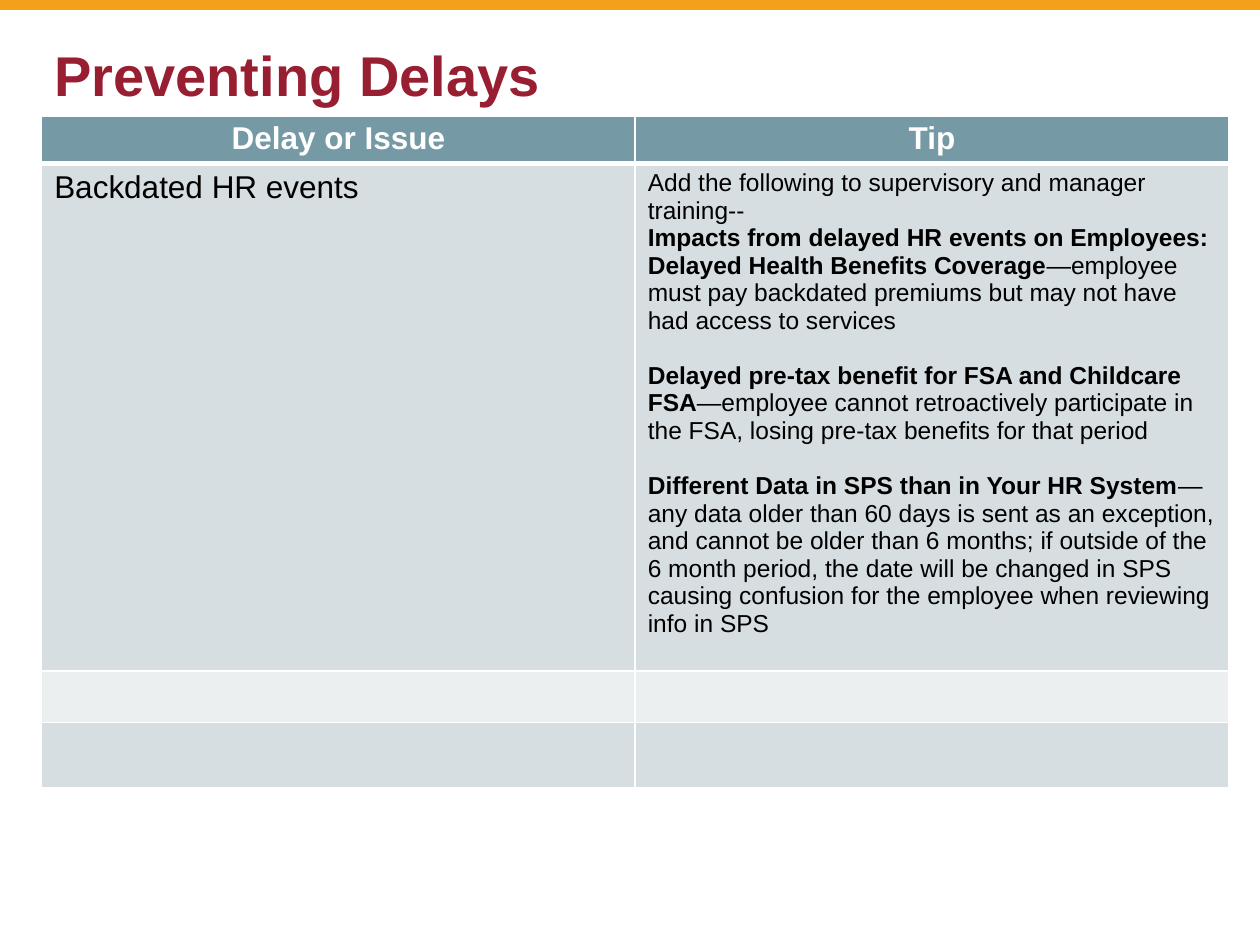
from lxml.etree import SubElement
from pptx import Presentation
from pptx.dml.color import RGBColor
from pptx.enum.shapes import MSO_SHAPE as Shape
from pptx.enum.text import MSO_ANCHOR as Anchor, PP_ALIGN as Align
from pptx.oxml.ns import qn
from pptx.util import Cm, Pt

ORANGE = RGBColor(0xF5, 0xA0, 0x1A)
CRIMSON = RGBColor(0x98, 0x1E, 0x32)
TEAL = RGBColor(0x75, 0x9A, 0xA5)
GREY = RGBColor(0xD6, 0xDE, 0xE1)
PALE = RGBColor(0xEC, 0xEF, 0xF0)
WHITE = RGBColor(0xFF, 0xFF, 0xFF)
BLACK = RGBColor(0, 0, 0)

LEFT, WIDTH = 0.84, 23.93
ROW_HEIGHTS = [0.95, 10.24, 1.02, 1.32]
ROW_FILLS = [TEAL, GREY, PALE, GREY]
THIN, THICK = 1, 3

# Each tip: bold lead, plain remainder, space before in points
TIPS = [
    ("", "Add the following to supervisory and manager training--", 0),
    ("Impacts from delayed HR events on Employees:", "", 0),
    ("Delayed Health Benefits Coverage",
     "—employee must pay backdated premiums but may not have had access "
     "to services", 0),
    ("Delayed pre-tax benefit for FSA and Childcare FSA",
     "—employee cannot retroactively participate in the FSA, losing pre-tax "
     "benefits for that period", 15.7),
    ("Different Data in SPS than in Your HR System",
     "—any data older than 60 days is sent as an exception, and cannot be "
     "older than 6 months; if outside of the 6 month period, the date will be "
     "changed in SPS causing confusion for the employee when reviewing info "
     "in SPS", 15.7),
]


class SlideBuilder:
    def __init__(self, slide, font_name="Arial"):
        self.slide = slide
        self.font_name = font_name

    def style(self, paragraph, size, color, bold=None):
        font = paragraph.font
        font.name, font.size, font.bold = self.font_name, Pt(size), bold
        font.color.rgb = color

    def bar(self, left, top, width, height, color):
        shape = self.slide.shapes.add_shape(
            Shape.RECTANGLE, Cm(left), Cm(top), Cm(width), Cm(height))
        shape.shadow.inherit = False
        shape.fill.solid()
        shape.fill.fore_color.rgb = color
        shape.line.fill.background()

    def title(self, text, left, top, width, height):
        title = self.slide.shapes.title
        title.left, title.top = Cm(left), Cm(top)
        title.width, title.height = Cm(width), Cm(height)
        title.text_frame.text = text
        title.text_frame.vertical_anchor = Anchor.MIDDLE
        paragraph = title.text_frame.paragraphs[0]
        paragraph.alignment = Align.LEFT
        self.style(paragraph, 32, CRIMSON, True)

    def table(self, left, top, width, row_heights, row_fills, column_count):
        table = self.slide.shapes.add_table(
            len(row_heights), column_count, Cm(left), Cm(top),
            Cm(width), Cm(sum(row_heights))).table
        for column in table.columns:
            column.width = Cm(width / column_count)
        for index, (row, height, color) in enumerate(
                zip(table.rows, row_heights, row_fills)):
            row.height = Cm(height)
            for cell in row.cells:
                cell.fill.solid()
                cell.fill.fore_color.rgb = color
                self.borders(cell, top=THICK if index == 1 else THIN,
                             bottom=THICK if index == 0 else THIN)
        return table

    def borders(self, cell, top, bottom):
        properties = cell._tc.get_or_add_tcPr()
        sides = [("a:lnL", THIN), ("a:lnR", THIN), ("a:lnT", top), ("a:lnB", bottom)]
        for position, (tag, width) in enumerate(sides):
            line = SubElement(properties, qn(tag), w=str(Pt(width)))
            fill = SubElement(line, qn("a:solidFill"))
            SubElement(fill, qn("a:srgbClr"), val=str(WHITE))
            properties.insert(position, line)  # borders come before the fill

    def header_cell(self, cell, text):
        cell.text = text
        cell.margin_top = cell.margin_bottom = Cm(0.1)
        paragraph = cell.text_frame.paragraphs[0]
        paragraph.alignment = Align.CENTER
        self.style(paragraph, 18, WHITE, True)

    def issue_cell(self, cell, text):
        cell.text = text
        self.style(cell.text_frame.paragraphs[0], 18, BLACK, False)

    def tips_cell(self, cell, tips):
        frame = cell.text_frame
        for index, (lead, remainder, space) in enumerate(tips):
            paragraph = frame.add_paragraph() if index else frame.paragraphs[0]
            if space:
                paragraph.space_before = Pt(space)
            self.style(paragraph, 14, BLACK)
            for text, bold in ((lead, True), (remainder, False)):
                if text:
                    run = paragraph.add_run()
                    run.text = text
                    run.font.bold = bold


def main():
    presentation = Presentation()
    presentation.slide_width, presentation.slide_height = Cm(25.4), Cm(19.05)
    title_only = presentation.slide_layouts[5]
    builder = SlideBuilder(presentation.slides.add_slide(title_only))

    builder.bar(0, 0, 25.4, 0.2, ORANGE)
    builder.title("Preventing Delays", LEFT, 0.64, WIDTH, 1.7)
    table = builder.table(LEFT, 2.34, WIDTH, ROW_HEIGHTS, ROW_FILLS, 2)
    for column, heading in enumerate(["Delay or Issue", "Tip"]):
        builder.header_cell(table.cell(0, column), heading)
    builder.issue_cell(table.cell(1, 0), "Backdated HR events")
    builder.tips_cell(table.cell(1, 1), TIPS)

    presentation.save("out.pptx")


if __name__ == "__main__":
    main()
